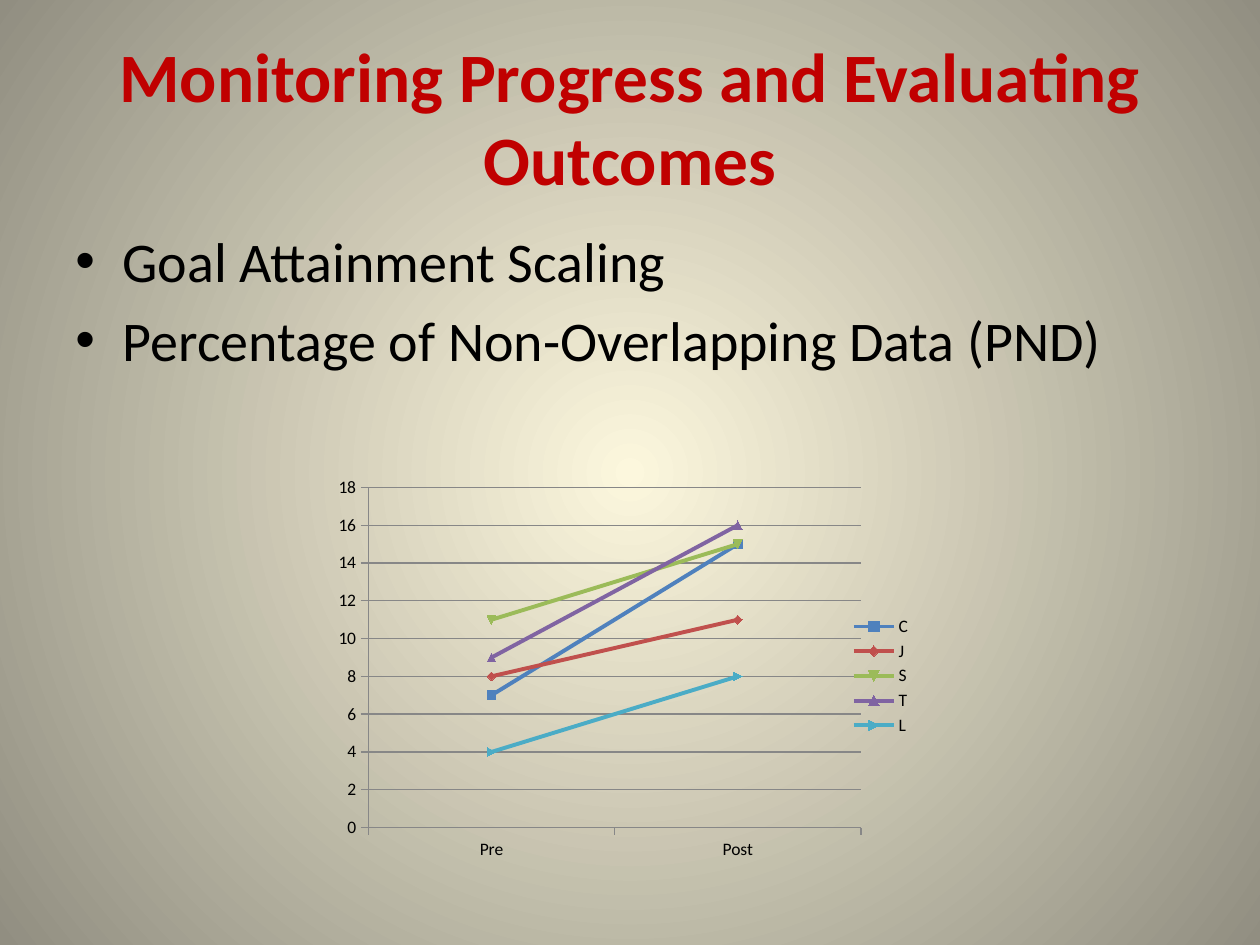
from lxml.etree import SubElement
from pptx import Presentation
from pptx.chart.data import CategoryChartData
from pptx.dml.color import RGBColor
from pptx.enum.chart import XL_CHART_TYPE, XL_LEGEND_POSITION, XL_TICK_MARK
from pptx.enum.text import MSO_ANCHOR, PP_ALIGN
from pptx.oxml import parse_xml
from pptx.oxml.ns import nsdecls, qn
from pptx.util import Pt

FONT = "Calibri"
BLACK, RED, GRAY = "000000", "C00000", "878787"
GOALS = ["Goal Attainment Scaling", "Percentage of Non-Overlapping Data (PND)"]
SCORES = {
    "C": ((7, 15), "4F81BD"),
    "J": ((8, 11), "C0504D"),
    "S": ((11, 15), "9BBB59"),
    "T": ((9, 16), "8064A2"),
    "L": ((4, 8), "4BACC6"),
}
PLOT_AREA = {"x": 0.118, "y": 0.037, "w": 0.782, "h": 0.836}


def rgb(color):
    return RGBColor.from_string(color)


def set_attributes(target, values):
    for name, value in values.items():
        setattr(target, name, value)


def style_font(font, size, color=BLACK, bold=False):
    set_attributes(font, {"name": FONT, "size": Pt(size), "bold": bold})
    font.color.rgb = rgb(color)


def style_line(line, color, width):
    line.color.rgb = rgb(color)
    line.width = Pt(width)


def paint_background(slide, center, edge):
    fill = slide.background.fill
    fill.gradient()
    for stop, color, position in zip(fill.gradient_stops, (center, edge), (0, 1)):
        stop.color.rgb = rgb(color)
        stop.position = position
    gradient = slide.background._cSld.find(".//" + qn("a:gradFill"))
    gradient.replace(gradient.find(qn("a:lin")), parse_xml(
        f'<a:path {nsdecls("a")} path="circle">'
        '<a:fillToRect l="50000" t="50000" r="50000" b="50000"/></a:path>'))


def add_text(slide, box, lines, anchor, size, color=BLACK, bold=False):
    frame = slide.shapes.add_textbox(*map(Pt, box)).text_frame
    set_attributes(frame, {"word_wrap": True, "vertical_anchor": anchor})
    frame.text = "\n".join(lines)
    for paragraph in frame.paragraphs:
        style_font(paragraph.runs[0].font, size, color, bold)
    return frame.paragraphs


def add_bullet(paragraph):
    paragraph.space_before = Pt(6.4)
    properties = paragraph._p.get_or_add_pPr()
    properties.set("marL", str(Pt(27)))
    properties.set("indent", str(-Pt(27)))
    SubElement(properties, qn("a:buFont"), typeface="Arial")
    SubElement(properties, qn("a:buChar"), char="•")


def place_plot(chart):
    plot_area = chart._chartSpace.chart.plotArea
    for layout in plot_area.findall(qn("c:layout")):
        plot_area.remove(layout)
    parts = "".join(f'<c:{name} val="{value}"/>' for name, value in PLOT_AREA.items())
    plot_area.insert(0, parse_xml(
        f'<c:layout {nsdecls("c")}><c:manualLayout><c:layoutTarget val="inner"/>'
        f'<c:xMode val="edge"/><c:yMode val="edge"/>{parts}'
        '</c:manualLayout></c:layout>'))


def add_score_chart(slide, box):
    data = CategoryChartData()
    data.categories = ["Pre", "Post"]
    for name, (values, _) in SCORES.items():
        data.add_series(name, values)
    chart = slide.shapes.add_chart(
        XL_CHART_TYPE.LINE_MARKERS, *map(Pt, box), data).chart
    style_font(chart.font, 10)
    set_attributes(chart, {"has_title": False, "has_legend": True})
    set_attributes(chart.legend, {
        "position": XL_LEGEND_POSITION.RIGHT, "include_in_layout": False})
    for axis in (chart.category_axis, chart.value_axis):
        set_attributes(axis, {"major_tick_mark": XL_TICK_MARK.OUTSIDE,
                              "minor_tick_mark": XL_TICK_MARK.NONE})
        style_line(axis.format.line, GRAY, 0.75)
    set_attributes(chart.value_axis, {
        "minimum_scale": 0, "maximum_scale": 18, "major_unit": 2,
        "has_major_gridlines": True})
    style_line(chart.value_axis.major_gridlines.format.line, GRAY, 0.75)
    chart.plots[0].vary_by_categories = False
    for series, (_, color) in zip(chart.plots[0].series, SCORES.values()):
        series.smooth = False
        style_line(series.format.line, color, 2.25)
        series.marker.format.fill.solid()
        series.marker.format.fill.fore_color.rgb = rgb(color)
        style_line(series.marker.format.line, color, 0.75)
    place_plot(chart)


def main():
    deck = Presentation()
    set_attributes(deck, {"slide_width": Pt(720), "slide_height": Pt(540)})
    slide = deck.slides.add_slide(deck.slide_layouts[6])
    paint_background(slide, "FCF7DD", "918E81")
    heading = add_text(slide, (36, 21.6, 648, 90),
                       ["Monitoring Progress and Evaluating Outcomes"],
                       MSO_ANCHOR.MIDDLE, 39.6, RED, True)
    heading[0].alignment = PP_ALIGN.CENTER
    for goal in add_text(slide, (36, 126, 648, 356.4), GOALS, MSO_ANCHOR.TOP, 32):
        add_bullet(goal)
    add_score_chart(slide, (168, 270, 360, 232.5))
    deck.save("out.pptx")


if __name__ == "__main__":
    main()
